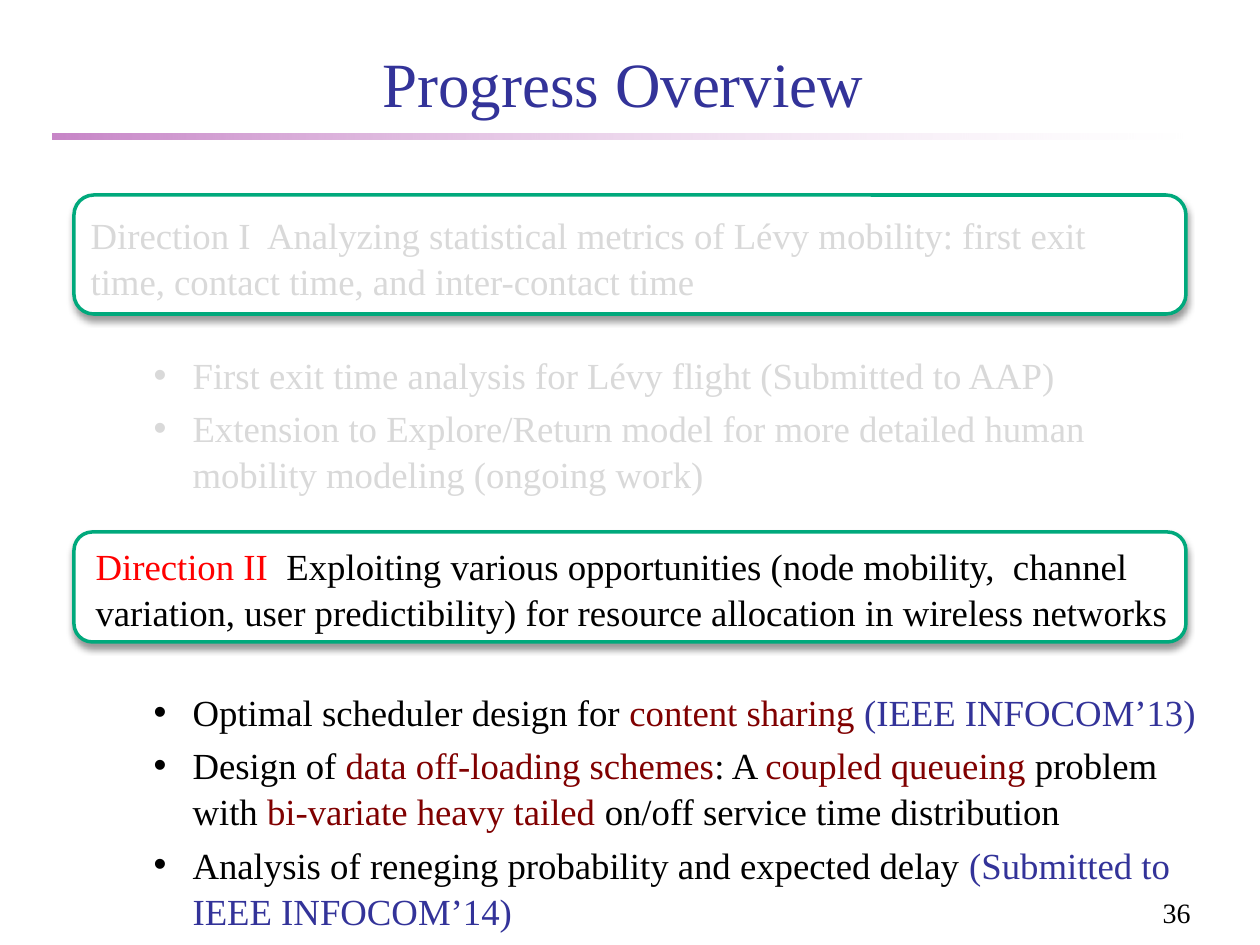
import pptx
import pptx.util
import pptx.dml.color
import pptx.enum.shapes
import pptx.enum.text
import pptx.oxml
import pptx.oxml.ns

PX = 914400 // 126  # EMU in one px
FONT = "Times New Roman"
HUES = {
    "blue": "333399", "black": "000000", "gray": "D9D9D9", "red": "FF0000",
    "wine": "800000", "green": "00A97C", "white": "FFFFFF",
    "plum": "8A008A", "pink": "D8A9D8",
}
ALIGN = pptx.enum.text.PP_ALIGN
ANCHOR = pptx.enum.text.MSO_ANCHOR
FORMS = pptx.enum.shapes.MSO_SHAPE


def rgb(hue):
    return pptx.dml.color.RGBColor.from_string(HUES[hue])


def node(xml):
    return pptx.oxml.parse_xml(xml.replace(">", f" {pptx.oxml.ns.nsdecls('a')}>", 1))


def place(part, box):
    part.left, part.top, part.width, part.height = (n * PX for n in box)


def write(part, items, size, align=ALIGN.LEFT, anchor=ANCHOR.TOP, bullet=False):
    """Fill a text part; each item is a list of (text, hue) runs."""
    frame = part.text_frame
    frame.word_wrap = True
    frame.auto_size = pptx.enum.text.MSO_AUTO_SIZE.NONE
    frame.vertical_anchor = anchor
    for i, runs in enumerate(items):
        para = frame.paragraphs[0] if i == 0 else frame.add_paragraph()
        if bullet:
            prop = para._p.get_or_add_pPr()
            prop.set("marL", str(102 * PX))
            prop.set("indent", str(-39 * PX))
            prop.append(node('<a:buChar char="•"/>'.replace("/>", "></a:buChar>")))
        para.alignment = align
        para.space_before = pptx.util.Pt(4 if i else 0)
        if size == 21:
            para.line_spacing = 1.05
        for text, hue in runs:
            run = para.add_run()
            run.text = text
            run.font.name = FONT
            run.font.size = pptx.util.Pt(size)
            run.font.bold = False
            run.font.color.rgb = rgb(hue)


def behind(slide, part):
    """Send a shape to the back, under the text placeholders."""
    slide.shapes._spTree.insert(2, part._element)


def header(slide, box, text):
    x, y, w, h = box
    place(slide.shapes.title, (x, y, w, 116))
    write(slide.shapes.title, [[(text, "blue")]], 36, ALIGN.CENTER, ANCHOR.BOTTOM)

    # Rule that fades out to the right
    rule = slide.shapes.add_shape(
        FORMS.RECTANGLE, *(n * PX for n in (x, y + h - 6, w - 6, 6)))
    rule.shadow.inherit = False
    rule.line.fill.background()
    rule.fill.gradient()
    rule.fill.gradient_angle = 0
    fades = zip(rule.fill.gradient_stops, ("plum", "pink"), (0, 1), (48000, 0))
    for stop, hue, spot, alpha in fades:
        stop.color.rgb = rgb(hue)
        stop.position = spot
        tint = stop._gs.find(pptx.oxml.ns.qn("a:srgbClr"))
        tint.append(node(f'<a:alpha val="{alpha}"></a:alpha>'))


def topic(slide, box, head, shift, tall, runs, body, drop, items):
    """A framed heading and the bullet list under it."""
    x, y, w, h = box

    # Frame with a soft shadow
    card = slide.shapes.add_shape(
        FORMS.ROUNDED_RECTANGLE, *(n * PX for n in (x, y, w, tall)))
    card.shadow.inherit = False
    card.fill.solid()
    card.fill.fore_color.rgb = rgb("white")
    card.line.color.rgb = rgb("green")
    card.line.width = pptx.util.Pt(2)
    glow = card._element.spPr.find(pptx.oxml.ns.qn("a:effectLst"))
    glow.append(node(
        '<a:outerShdw blurRad="50800" dist="38100" dir="5400000" rotWithShape="0">'
        f'<a:srgbClr val="{HUES["black"]}"><a:alpha val="40000"/></a:srgbClr>'
        '</a:outerShdw>'))
    behind(slide, card)

    # Heading
    across, down = shift
    place(head, (x + across, y + down, w - across - 4, tall - down))
    write(head, [runs], 21)

    # List
    place(body, (x + 4, y + drop, w + 37, h - drop))
    write(body, items, 21, bullet=True)


def footer(slide, box, text):
    note = slide.shapes.add_textbox(*(n * PX for n in box))
    write(note, [[(text, "black")]], 16, ALIGN.RIGHT)


def main():
    deck = pptx.Presentation()
    deck.slide_width, deck.slide_height = 1260 * PX, 945 * PX
    slide = deck.slides.add_slide(deck.slide_layouts[4])
    slots = {p.placeholder_format.idx: p for p in slide.placeholders}

    header(slide, (53, 10, 1140, 130), "Progress Overview")

    topic(
        slide, (74, 195, 1112, 310), slots[1], (4, 9), 119,
        [("Direction I  Analyzing statistical metrics of Lévy mobility: "
          "first exit time, contact time, and inter-contact time", "gray")],
        slots[2], 149,
        [
            [("First exit time analysis for Lévy flight (Submitted to AAP)", "gray")],
            [("Extension to Explore/Return model for more detailed human "
              "mobility modeling (ongoing work)", "gray")],
        ])

    topic(
        slide, (74, 532, 1112, 400), slots[3], (9, 3), 110,
        [("Direction II  ", "red"),
         ("Exploiting various opportunities (node mobility,  channel variation, "
          "user predictibility) for resource allocation in wireless networks",
          "black")],
        slots[4], 149,
        [
            [("Optimal scheduler design for ", "black"),
             ("content sharing ", "wine"),
             ("(IEEE INFOCOM’13)", "blue")],
            [("Design of ", "black"),
             ("data off-loading schemes", "wine"),
             (": A ", "black"),
             ("coupled queueing ", "wine"),
             ("problem with ", "black"),
             ("bi-variate heavy tailed ", "wine"),
             ("on/off service time distribution", "black")],
            [("Analysis of reneging probability and expected delay ", "black"),
             ("(Submitted to IEEE INFOCOM’14)", "blue")],
        ])

    footer(slide, (1100, 889, 103, 46), "36")
    deck.save("out.pptx")


if __name__ == "__main__":
    main()
